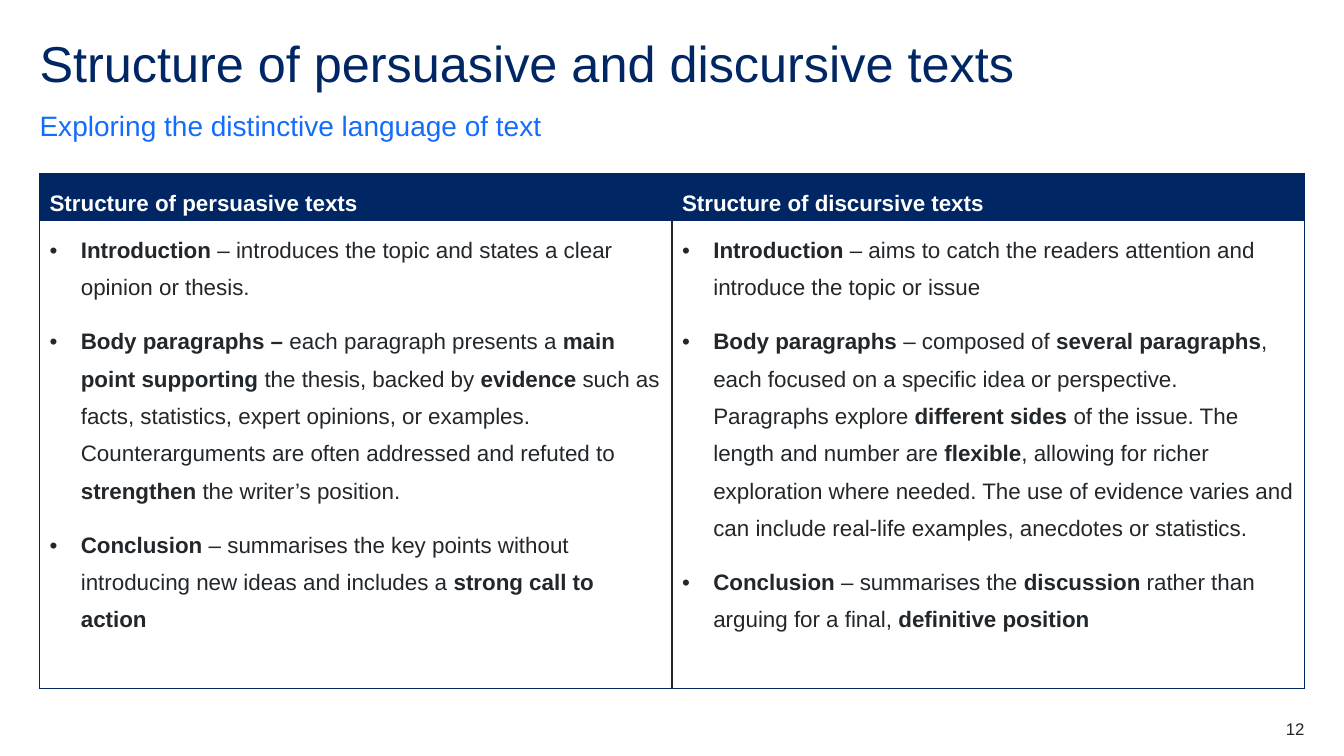
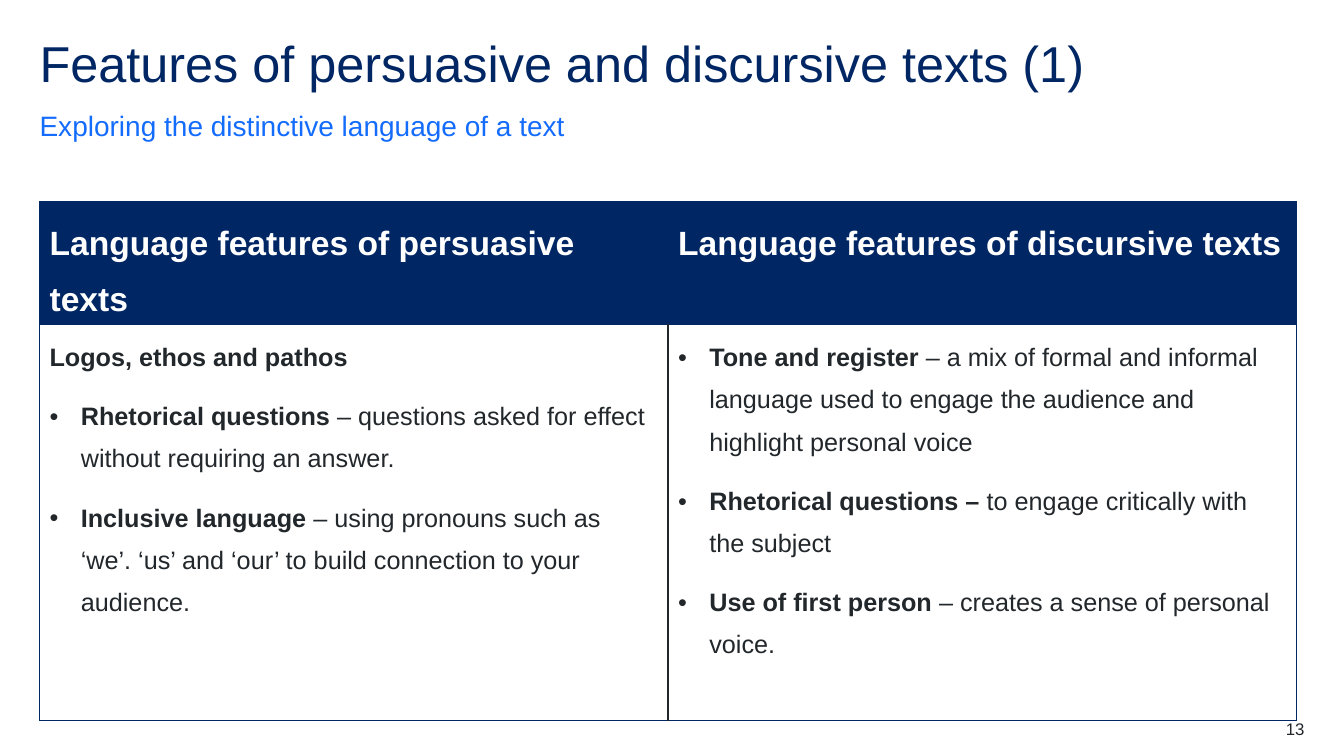
from dataclasses import dataclass
from typing import Any

from lxml.etree import SubElement
from pptx import Presentation
from pptx.dml.color import RGBColor
from pptx.enum.text import MSO_ANCHOR, MSO_AUTO_SIZE, PP_ALIGN
from pptx.oxml import parse_xml
from pptx.oxml.ns import nsdecls, qn
from pptx.util import Inches, Pt

NAVY = RGBColor(0x00, 0x26, 0x64)
BLUE = RGBColor(0x14, 0x6C, 0xFD)
INK = RGBColor(0x22, 0x27, 0x2B)
WHITE = RGBColor(0xFF, 0xFF, 0xFF)

FONT_NAME = "Arial"
SLIDE_WIDTH = Inches(13.33)
SLIDE_HEIGHT = Inches(7.5)
COLUMN = SLIDE_WIDTH / 34
ROW = SLIDE_HEIGHT / 75
BULLET_INDENT = Inches(0.31)
BOLD_MARK = "**"
TITLE_ONLY_LAYOUT = 5

FRAME_FORMAT = {
    "margin_left": 0,
    "margin_top": 0,
    "margin_right": 0,
    "margin_bottom": 0,
    "word_wrap": True,
    "auto_size": MSO_AUTO_SIZE.NONE,
}
TITLE_PARAGRAPH = {"line_spacing": 0.9, "alignment": PP_ALIGN.LEFT}
BODY_PARAGRAPH = {"line_spacing": 1.5, "space_after": Pt(12), "alignment": PP_ALIGN.LEFT}
NUMBER_PARAGRAPH = {"alignment": PP_ALIGN.RIGHT}


@dataclass(frozen=True)
class Area:
    column: float
    row: float
    columns: float
    rows: float


@dataclass(frozen=True)
class TextStyle:
    size: int
    color: RGBColor
    paragraph: dict[str, Any]


@dataclass(frozen=True)
class Line:
    text: str
    bullet: bool = True


@dataclass(frozen=True)
class TextType:
    heading: str
    lines: list[Line]


@dataclass(frozen=True)
class Comparison:
    title: str
    subtitle: str
    number: int
    table_top: float
    table_columns: float
    header_rows: float
    body_rows: float
    header_size: int
    body_size: int
    text_types: list[TextType]


TITLE_AREA = Area(1, 3.9, 32, 6)
SUBTITLE_AREA = Area(1, 10.7, 32, 3.4)
NUMBER_AREA = Area(31, 71.3, 2, 2)

TITLE_STYLE = TextStyle(36, NAVY, TITLE_PARAGRAPH)
SUBTITLE_STYLE = TextStyle(20, BLUE, BODY_PARAGRAPH)
NUMBER_STYLE = TextStyle(12, INK, NUMBER_PARAGRAPH)

COMPARISONS = [
    Comparison(
        title="Structure of persuasive and discursive texts",
        subtitle="Exploring the distinctive language of text",
        number=12,
        table_top=17.2,
        table_columns=32,
        header_rows=4.6,
        body_rows=46.4,
        header_size=16,
        body_size=16,
        text_types=[
            TextType("Structure of persuasive texts", [
                Line("**Introduction** – introduces the topic and states a clear opinion or thesis."),
                Line(
                    "**Body paragraphs – **each paragraph presents a **main point supporting **"
                    "the thesis, backed by **evidence** such as facts, statistics, expert opinions, "
                    "or examples. Counterarguments are often addressed and refuted to "
                    "**strengthen** the writer’s position."
                ),
                Line(
                    "**Conclusion** – summarises the key points without introducing new ideas "
                    "and includes a **strong call to action**"
                ),
            ]),
            TextType("Structure of discursive texts", [
                Line(
                    "**Introduction** – aims to catch the readers attention and introduce "
                    "the topic or issue"
                ),
                Line(
                    "**Body paragraphs **– composed of **several paragraphs**, each focused on "
                    "a specific idea or perspective. Paragraphs explore **different sides **"
                    "of the issue. The length and number are **flexible**, allowing for richer "
                    "exploration where needed. The use of evidence varies and can include "
                    "real-life examples, anecdotes or statistics."
                ),
                Line(
                    "**Conclusion** – summarises the **discussion** rather than arguing for "
                    "a final, **definitive position**"
                ),
            ]),
        ],
    ),
    Comparison(
        title="Features of persuasive and discursive texts (1)",
        subtitle="Exploring the distinctive language of a text",
        number=13,
        table_top=20,
        table_columns=31.8,
        header_rows=12.2,
        body_rows=39.3,
        header_size=24,
        body_size=18,
        text_types=[
            TextType("Language features of persuasive texts", [
                Line("**Logos, ethos and pathos**", bullet=False),
                Line(
                    "**Rhetorical questions **– questions asked for effect without requiring "
                    "an answer."
                ),
                Line(
                    "**Inclusive language **– using pronouns such as ‘we’. ‘us’ and ‘our’ "
                    "to build connection to your audience."
                ),
            ]),
            TextType("Language features of discursive texts", [
                Line(
                    "**Tone and register **– a mix of formal and informal language used to "
                    "engage the audience and highlight personal voice"
                ),
                Line("**Rhetorical questions – **to engage critically with the subject"),
                Line("**Use of first person **– creates a sense of personal voice."),
            ]),
        ],
    ),
]


def apply_format(target: Any, values: dict[str, Any]) -> None:
    for name, value in values.items():
        setattr(target, name, value)


def place(area: Area) -> dict[str, int]:
    return {
        "left": round(area.column * COLUMN),
        "top": round(area.row * ROW),
        "width": round(area.columns * COLUMN),
        "height": round(area.rows * ROW),
    }


def add_bullet(paragraph: Any) -> None:
    properties = paragraph._p.get_or_add_pPr()
    properties.set("marL", str(BULLET_INDENT))
    properties.set("indent", str(-BULLET_INDENT))
    SubElement(properties, qn("a:buFont")).set("typeface", FONT_NAME)
    SubElement(properties, qn("a:buChar")).set("char", "•")


def write_lines(text_frame: Any, lines: list[Line], style: TextStyle) -> None:
    for index, line in enumerate(lines):
        paragraph = text_frame.add_paragraph() if index else text_frame.paragraphs[0]
        apply_format(paragraph, style.paragraph)
        if line.bullet:
            add_bullet(paragraph)
        for part, text in enumerate(line.text.split(BOLD_MARK)):
            if text:
                run = paragraph.add_run()
                run.text = text
                apply_format(run.font, {
                    "name": FONT_NAME,
                    "size": Pt(style.size),
                    "bold": part % 2 == 1,
                })
                run.font.color.rgb = style.color


def fill_text_box(shape: Any, text: str, style: TextStyle, anchor: MSO_ANCHOR) -> None:
    apply_format(shape.text_frame, FRAME_FORMAT | {"vertical_anchor": anchor})
    write_lines(shape.text_frame, [Line(text, bullet=False)], style)


def add_text_box(
    slide: Any, area: Area, text: str, style: TextStyle, anchor: MSO_ANCHOR
) -> None:
    fill_text_box(slide.shapes.add_textbox(**place(area)), text, style, anchor)


def set_borders(cell: Any, inner_side: str, inner_color: RGBColor, inner_width: float) -> None:
    properties = cell._tc.get_or_add_tcPr()
    for index, side in enumerate("LRTB"):
        is_inner = side == inner_side
        color = inner_color if is_inner else NAVY
        width = Pt(inner_width if is_inner else 0.5)
        properties.insert(index, parse_xml(
            f'<a:ln{side} {nsdecls("a")} w="{width}"><a:solidFill>'
            f'<a:srgbClr val="{color}"/></a:solidFill></a:ln{side}>'
        ))


def fill_cell(cell: Any, lines: list[Line], style: TextStyle, fill: RGBColor) -> None:
    cell.fill.solid()
    cell.fill.fore_color.rgb = fill
    write_lines(cell.text_frame, lines, style)


def add_comparison_table(slide: Any, comparison: Comparison) -> None:
    area = Area(
        1,
        comparison.table_top,
        comparison.table_columns,
        comparison.header_rows + comparison.body_rows,
    )
    table = slide.shapes.add_table(2, len(comparison.text_types), **place(area)).table
    table.horz_banding = False
    for table_row, rows in zip(table.rows, (comparison.header_rows, comparison.body_rows)):
        table_row.height = round(rows * ROW)
    header_style = TextStyle(comparison.header_size, WHITE, BODY_PARAGRAPH)
    body_style = TextStyle(comparison.body_size, INK, BODY_PARAGRAPH)
    for index, (text_type, inner_side) in enumerate(zip(comparison.text_types, "RL")):
        header, body = table.cell(0, index), table.cell(1, index)
        heading = Line(f"{BOLD_MARK}{text_type.heading}{BOLD_MARK}", bullet=False)
        fill_cell(header, [heading], header_style, NAVY)
        fill_cell(body, text_type.lines, body_style, WHITE)
        set_borders(header, inner_side, NAVY, 0.5)
        set_borders(body, inner_side, INK, 1)


def add_comparison_slide(presentation: Any, comparison: Comparison) -> None:
    slide = presentation.slides.add_slide(presentation.slide_layouts[TITLE_ONLY_LAYOUT])
    title = slide.shapes.title
    apply_format(title, place(TITLE_AREA))
    fill_text_box(title, comparison.title, TITLE_STYLE, MSO_ANCHOR.TOP)
    add_text_box(
        slide, SUBTITLE_AREA, comparison.subtitle, SUBTITLE_STYLE, MSO_ANCHOR.BOTTOM
    )
    add_comparison_table(slide, comparison)
    add_text_box(
        slide, NUMBER_AREA, str(comparison.number), NUMBER_STYLE, MSO_ANCHOR.TOP
    )


def main() -> None:
    presentation = Presentation()
    apply_format(presentation, {"slide_width": SLIDE_WIDTH, "slide_height": SLIDE_HEIGHT})
    for comparison in COMPARISONS:
        add_comparison_slide(presentation, comparison)
    presentation.save("out.pptx")


if __name__ == "__main__":
    main()
